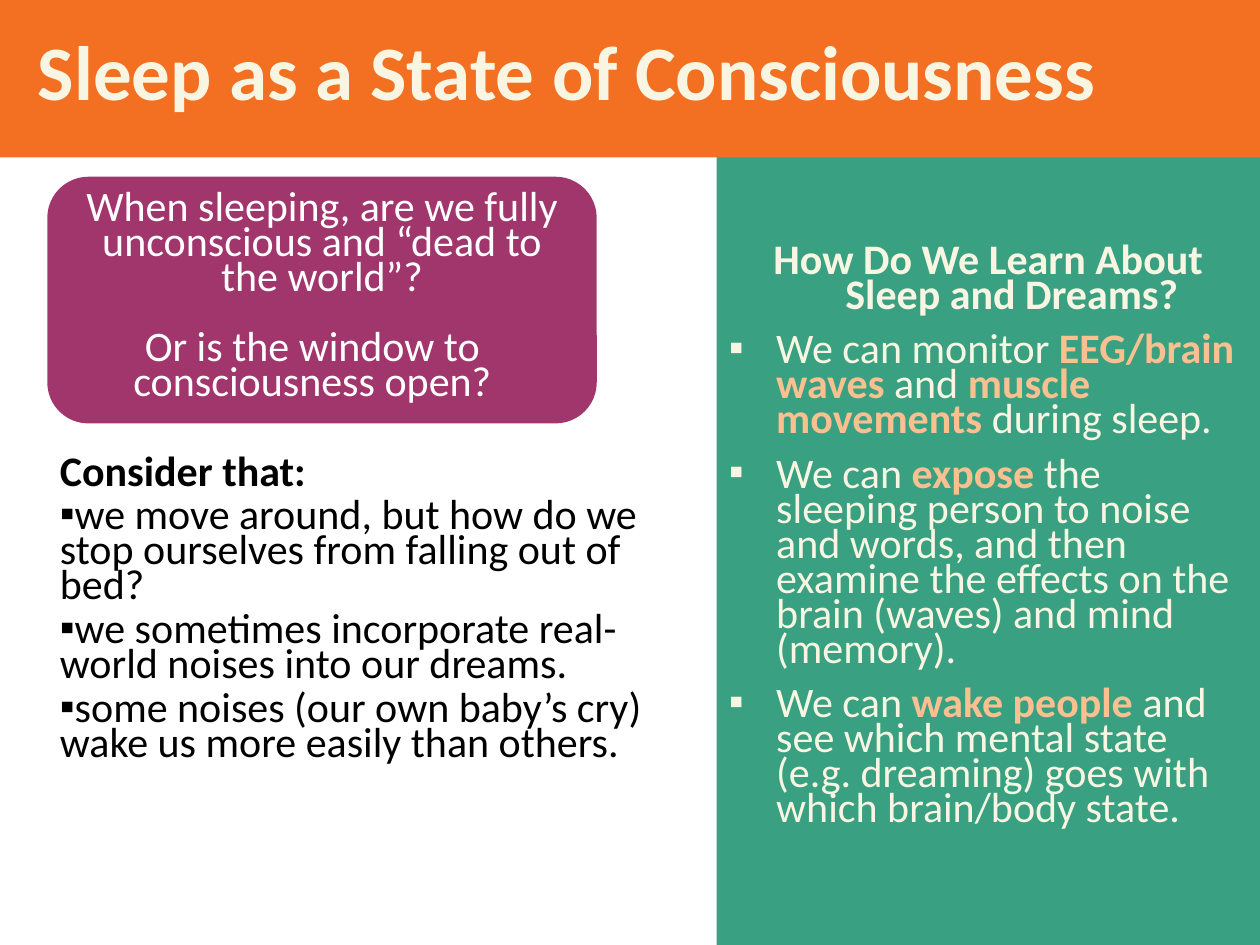
from lxml.etree import SubElement
from pptx import Presentation
from pptx.dml.color import RGBColor as RGB
from pptx.enum.shapes import MSO_SHAPE as SHAPE
from pptx.enum.text import MSO_ANCHOR as ANCHOR, MSO_AUTO_SIZE as AUTO, PP_ALIGN as ALIGN
from pptx.oxml.ns import qn
from pptx.util import Pt

COLORS = {"orange": "F36F21", "green": "3AA082", "plum": "A0366C", "cream": "F8F6E3",
          "peach": "FAC090", "white": "FFFFFF", "black": "000000"}
FONT = "Calibri"
LIST_FORMAT = {"line_spacing": Pt(20), "space_before": Pt(5), "space_after": Pt(0)}
PANEL_FORMAT = {**LIST_FORMAT, "space_after": Pt(6)}
QUESTION_FORMAT = {"line_spacing": Pt(20), "alignment": ALIGN.CENTER}


def rgb(name):
    return RGB.from_string(COLORS[name])


def place(sp, left, top, width, height):
    box = {"left": left, "top": top, "width": width, "height": height}
    for name, value in box.items():
        setattr(sp, name, Pt(value))


def fill_with(sp, color):
    sp.fill.solid()
    sp.fill.fore_color.rgb = rgb(color)


def set_frame(tf, **values):
    defaults = {"word_wrap": True, "auto_size": AUTO.NONE}
    for name, value in {**defaults, **values}.items():
        setattr(tf, name, value)


def add_block(slide, kind, box, color):
    sp = slide.shapes.add_shape(kind, *map(Pt, box))
    sp.shadow.inherit = False
    sp.line.fill.background()
    fill_with(sp, color)
    set_frame(sp.text_frame, vertical_anchor=ANCHOR.MIDDLE)
    return sp


def add_paragraph(tf, runs, formats, bullet=None, hang=0):
    """Write (text, colour, bold) runs into the empty first or a new paragraph."""
    p = tf.paragraphs[0] if not tf.text else tf.add_paragraph()
    for name, value in formats.items():
        setattr(p, name, value)
    pPr = p._p.get_or_add_pPr()
    pPr.set("marL", str(Pt(hang)))
    pPr.set("indent", str(-Pt(hang)))
    if bullet:
        SubElement(pPr, qn("a:buFont")).set("typeface", "Arial")
        SubElement(pPr, qn("a:buChar")).set("char", bullet)
    else:
        SubElement(pPr, qn("a:buNone"))
    for text, color, bold in runs:
        r = p.add_run()
        r.text = text
        for name, value in {"name": FONT, "size": Pt(24), "bold": bold}.items():
            setattr(r.font, name, value)
        r.font.color.rgb = rgb(color)
    return p


def write_title(sp):
    place(sp, 0, 0, 720, 90)
    fill_with(sp, "orange")
    tf = sp.text_frame
    set_frame(tf, vertical_anchor=ANCHOR.MIDDLE, margin_left=Pt(21.6))
    p = add_paragraph(tf, [("Sleep as a State of Consciousness", "cream", True)],
                      {"line_spacing": Pt(42), "alignment": ALIGN.LEFT})
    p.runs[0].font.size = Pt(44)


def write_considerations(sp):
    place(sp, 27, 259, 348.5, 268)
    tf = sp.text_frame
    set_frame(tf, vertical_anchor=ANCHOR.TOP)
    add_paragraph(tf, [("Consider that:", "black", True)], LIST_FORMAT)
    for text in ("we move around, but how do we stop ourselves from falling out of bed?",
                 "we sometimes incorporate real-world noises into our dreams.",
                 "some noises (our own baby’s cry) wake us more easily than others."):
        add_paragraph(tf, [(text, "black", False)], LIST_FORMAT, "▪")


def add_methods_panel(slide):
    sp = add_block(slide, SHAPE.RECTANGLE, (409.5, 76.5, 310.5, 463.5), "green")
    slide.shapes._spTree.insert(2, sp._element)  # behind the title band
    tf = sp.text_frame
    add_paragraph(tf, [("How Do We Learn About Sleep and Dreams?", "cream", True)],
                  {**PANEL_FORMAT, "alignment": ALIGN.CENTER}, hang=27)
    # Plain and highlighted pieces alternate.
    methods = [
        ("We can monitor ", "EEG/brain waves ", "and ", "muscle movements ", "during sleep."),
        ("We can ", "expose", " the sleeping person to noise and words, and then examine "
         "the effects on the brain (waves) and mind (memory)."),
        ("We can ", "wake people ", "and see which mental state (e.g. dreaming) goes with "
         "which brain/body state."),
    ]
    for pieces in methods:
        runs = [(text, "peach" if i % 2 else "cream", bool(i % 2))
                for i, text in enumerate(pieces)]
        add_paragraph(tf, runs, {**PANEL_FORMAT, "alignment": ALIGN.LEFT}, "▪", 27)


def add_question_box(slide):
    sp = add_block(slide, SHAPE.ROUNDED_RECTANGLE, (27, 101, 314, 141), "plum")
    tf = sp.text_frame
    add_paragraph(tf, [("When sleeping, are we fully unconscious and “dead to the world”?",
                        "white", False)], QUESTION_FORMAT)
    p = add_paragraph(tf, [("Or is the window to consciousness open?", "white", False)],
                      {**QUESTION_FORMAT, "space_before": Pt(20)})
    p._p.pPr.set("marR", str(Pt(11)))


def main():
    prs = Presentation()
    prs.slide_width, prs.slide_height = Pt(720), Pt(540)
    slide = prs.slides.add_slide(prs.slide_layouts[1])
    write_title(slide.shapes.title)
    write_considerations(slide.placeholders[1])
    add_methods_panel(slide)
    add_question_box(slide)
    prs.save("out.pptx")


if __name__ == "__main__":
    main()
